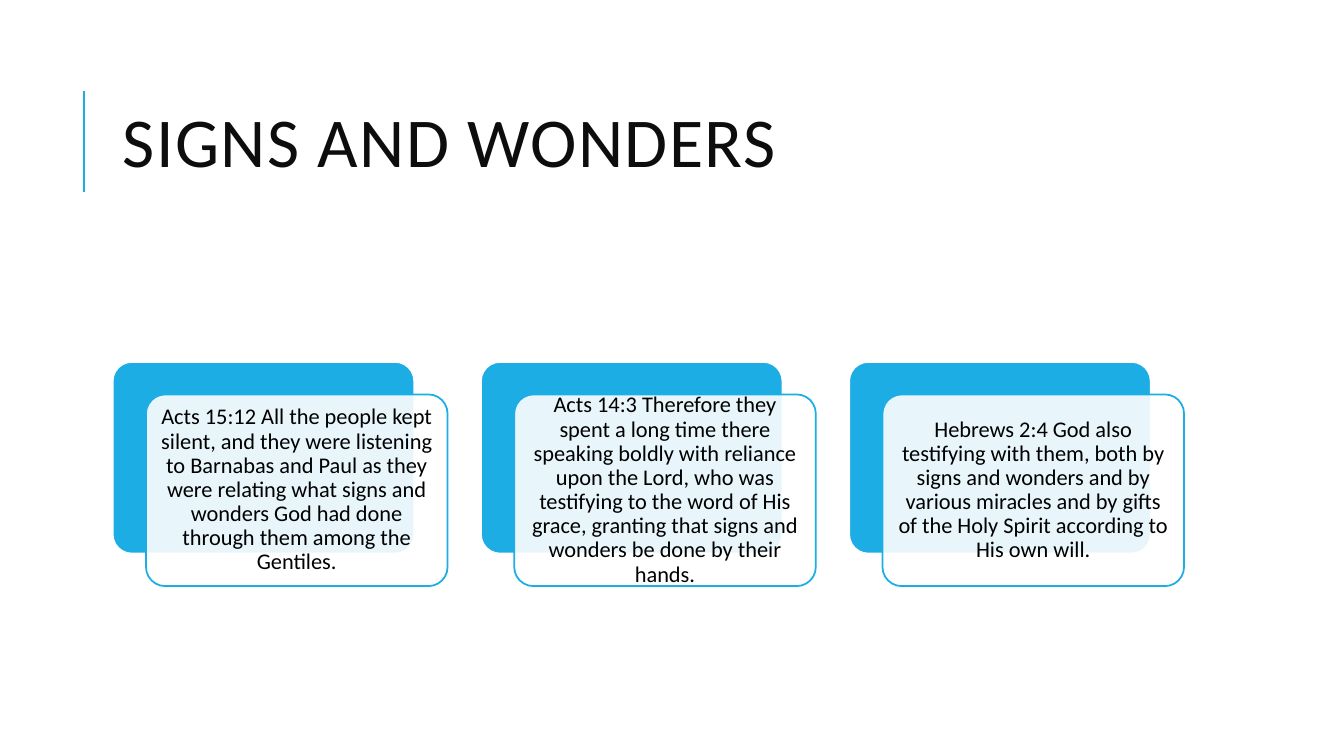
"""Build the Signs and Wonders slide with three verse cards."""
import dataclasses
import typing

import lxml.etree
import pptx
import pptx.dml.color
import pptx.enum.shapes
import pptx.enum.text
import pptx.oxml.ns
import pptx.util

Cm = pptx.util.Cm
Pt = pptx.util.Pt
qn = pptx.oxml.ns.qn

BLUE = "1CADE4"
WHITE = "FFFFFF"
INK = "0D0D0D"
BLACK = "000000"
FONT = "Calibri"

LEFT, TOP, WIDTH, HIGH = 2.84, 9.12, 7.6, 4.83
STEP, SHIFT, DROP = 9.28, 0.84, 0.82


@dataclasses.dataclass
class Panel:
    left: float
    top: float
    fill: str
    line: str
    alpha: int = 100


VERSES = [
    "Acts 15:12 All the people kept silent, and they were listening to Barnabas and Paul "
    "as they were relating what signs and wonders God had done through them among the Gentiles.",
    "Acts 14:3 Therefore they spent a long time there speaking boldly with reliance upon "
    "the Lord, who was testifying to the word of His grace, granting that signs and wonders "
    "be done by their hands.",
    "Hebrews 2:4 God also testifying with them, both by signs and wonders and by various "
    "miracles and by gifts of the Holy Spirit according to His own will.",
]


def color(code: str) -> pptx.dml.color.RGBColor:
    """Turn a hex string into a colour."""
    return pptx.dml.color.RGBColor.from_string(code)


def write(frame: typing.Any, text: str, size: float, ink: str, gap: float) -> typing.Any:
    """Add one run to the first paragraph and return the run."""
    frame.word_wrap = True
    frame.vertical_anchor = pptx.enum.text.MSO_ANCHOR.MIDDLE
    para = frame.paragraphs[0]
    para.line_spacing = gap
    run = para.add_run()
    run.text = text
    run.font.name = FONT
    run.font.size = Pt(size)
    run.font.color.rgb = color(ink)
    return run


def draw_panel(slide: typing.Any, panel: Panel) -> typing.Any:
    """Draw one rounded panel."""
    shape = slide.shapes.add_shape(
        pptx.enum.shapes.MSO_SHAPE.ROUNDED_RECTANGLE,
        Cm(panel.left), Cm(panel.top), Cm(WIDTH), Cm(HIGH))
    shape.adjustments[0] = 0.1
    shape.shadow.inherit = False
    shape.fill.solid()
    shape.fill.fore_color.rgb = color(panel.fill)
    shape.line.color.rgb = color(panel.line)
    shape.line.width = Pt(1.25)
    if panel.alpha < 100:
        tint = shape.fill._xPr.find(qn("a:solidFill"))[0]
        lxml.etree.SubElement(tint, qn("a:alpha")).set("val", str(panel.alpha * 1000))
    return shape


def draw_card(slide: typing.Any, left: float, verse: str) -> None:
    """Draw a blue panel with a verse panel over it."""
    draw_panel(slide, Panel(left, TOP, BLUE, WHITE))
    front = draw_panel(slide, Panel(left + SHIFT, TOP + DROP, WHITE, BLUE, 90))
    frame = front.text_frame
    frame.margin_left = frame.margin_right = Cm(0.18)
    frame.margin_top = frame.margin_bottom = Cm(0.18)
    write(frame, verse, 16, BLACK, 0.9)
    frame.paragraphs[0].alignment = pptx.enum.text.PP_ALIGN.CENTER


def draw_title(slide: typing.Any) -> None:
    """Draw the title and the rule beside it."""
    rule = slide.shapes.add_connector(
        pptx.enum.shapes.MSO_CONNECTOR.STRAIGHT, Cm(2.12), Cm(4.83), Cm(2.12), Cm(2.29))
    rule.line.color.rgb = color(BLUE)
    rule.line.width = Pt(1.5)
    lxml.etree.SubElement(rule._element.spPr, qn("a:effectLst"))
    box = slide.shapes.add_textbox(Cm(LEFT), Cm(1.63), Cm(27), Cm(4.17))
    run = write(box.text_frame, "SIGNS AND WONDERS", 50, INK, 0.8)
    run.font._element.set("spc", "100")


def main() -> None:
    """Build and save the slide."""
    deck = pptx.Presentation()
    deck.slide_width = Cm(33.87)
    deck.slide_height = Cm(19.05)
    slide = deck.slides.add_slide(deck.slide_layouts[6])
    draw_title(slide)
    for place, verse in enumerate(VERSES):
        draw_card(slide, LEFT + place * STEP, verse)
    deck.save("out.pptx")


if __name__ == "__main__":
    main()
